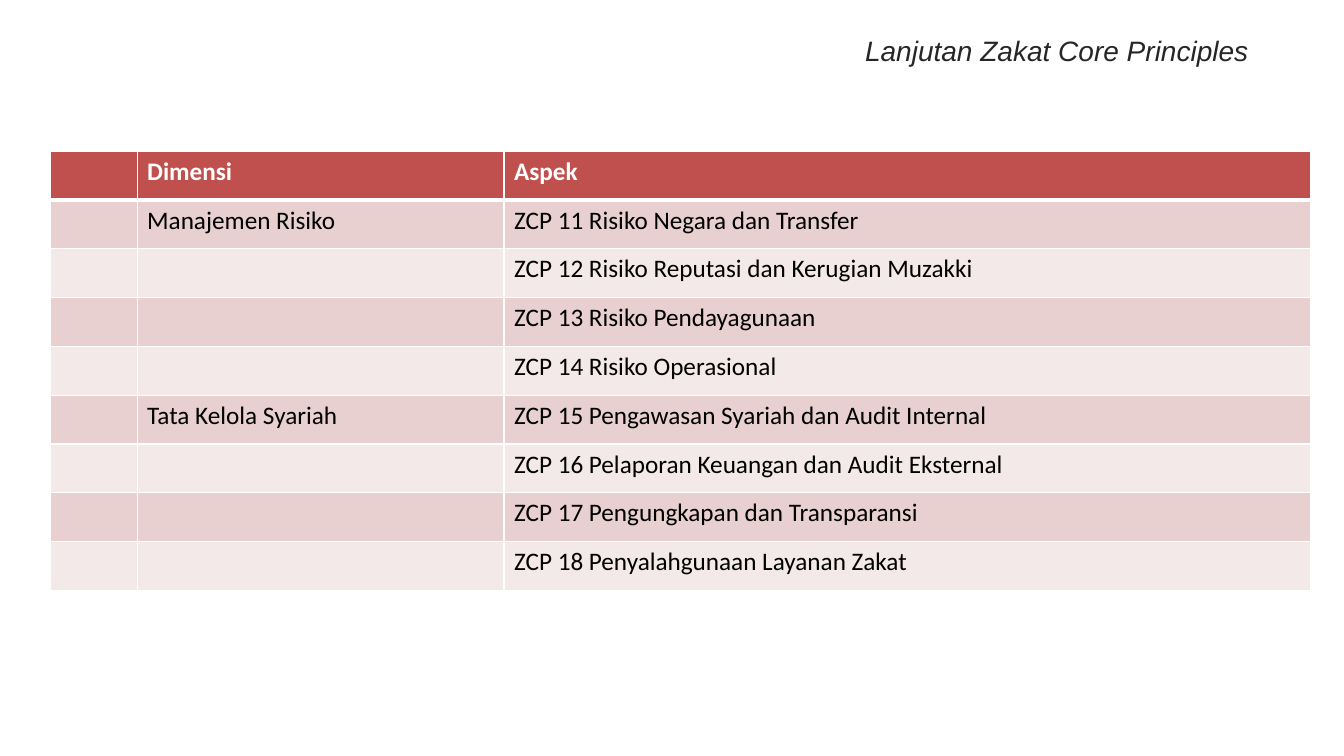
from lxml.etree import SubElement
from pptx import Presentation
from pptx.dml.color import RGBColor
from pptx.oxml.ns import qn
from pptx.util import Inches, Pt

HEADINGS = ["", "Dimensi", "Aspek"]
PRINCIPLES = {
    "Manajemen Risiko": [
        "ZCP 11 Risiko Negara dan Transfer",
        "ZCP 12 Risiko Reputasi dan Kerugian Muzakki",
        "ZCP 13 Risiko Pendayagunaan",
        "ZCP 14 Risiko Operasional",
    ],
    "Tata Kelola Syariah": [
        "ZCP 15 Pengawasan Syariah dan Audit Internal",
        "ZCP 16 Pelaporan Keuangan dan Audit Eksternal",
        "ZCP 17 Pengungkapan dan Transparansi",
        "ZCP 18 Penyalahgunaan Layanan Zakat",
    ],
}


def color(value):
    return RGBColor.from_string(value)


class SlideBuilder:
    """Holds the style and the current slide, and adds its elements."""

    header_fill = "C0504D"
    band_fills = ["E8D0D0", "F4E9E9"]
    border = "FFFFFF"

    def __init__(self, page):
        self.page = page

    def add_span(self, frame, text, font, size, ink, bold=False, italic=False):
        span = frame.paragraphs[0].add_run()
        span.text = text
        span.font.name = font
        span.font.size = Pt(size)
        span.font.bold = bold
        span.font.italic = italic
        span.font.color.rgb = color(ink)

    def title(self, text, left, top, width, height):
        box = self.page.shapes.add_textbox(
            Inches(left), Inches(top), Inches(width), Inches(height))
        frame = box.text_frame
        frame.word_wrap = True
        frame.margin_left = frame.margin_right = 0
        frame.margin_top = frame.margin_bottom = 0
        self.add_span(frame, text, "Arial", 20, "262626", italic=True)

    def borders(self, cell, top, bottom):
        properties = cell._tc.get_or_add_tcPr()
        for side, width in (("L", 1), ("R", 1), ("T", top), ("B", bottom)):
            line = SubElement(properties, qn(f"a:ln{side}"), w=str(Pt(width)))
            fill = SubElement(line, qn("a:solidFill"))
            SubElement(fill, qn("a:srgbClr"), val=self.border)

    def cell(self, cell, text, row):
        is_header = row == 0
        self.borders(cell, 3 if row == 1 else 1, 3 if is_header else 1)
        cell.fill.solid()
        cell.fill.fore_color.rgb = color(
            self.header_fill if is_header else self.band_fills[(row - 1) % 2])
        if text:
            ink = "FFFFFF" if is_header else "000000"
            self.add_span(cell.text_frame, text, "Calibri", 18, ink, bold=is_header)

    def table(self, rows, left, top, widths, height):
        table = self.page.shapes.add_table(
            len(rows), len(widths), Inches(left), Inches(top),
            Inches(sum(widths)), Inches(height)).table
        for column, width in zip(table.columns, widths):
            column.width = Inches(width)
        for index, texts in enumerate(rows):
            table.rows[index].height = Inches(height / len(rows))
            for position, text in enumerate(texts):
                self.cell(table.cell(index, position), text, index)


def main():
    deck = Presentation()
    deck.slide_width = Inches(13.33)
    deck.slide_height = Inches(7.5)
    builder = SlideBuilder(deck.slides.add_slide(deck.slide_layouts[6]))

    builder.title("Lanjutan Zakat Core Principles", 8.58, 0.33, 4.5, 0.34)
    rows = [HEADINGS]
    for dimension, aspects in PRINCIPLES.items():
        for index, aspect in enumerate(aspects):
            rows.append(["", "" if index else dimension, aspect])
    builder.table(rows, 0.5, 1.5, [0.86, 3.64, 8], 4.36)

    deck.save("out.pptx")


if __name__ == "__main__":
    main()
